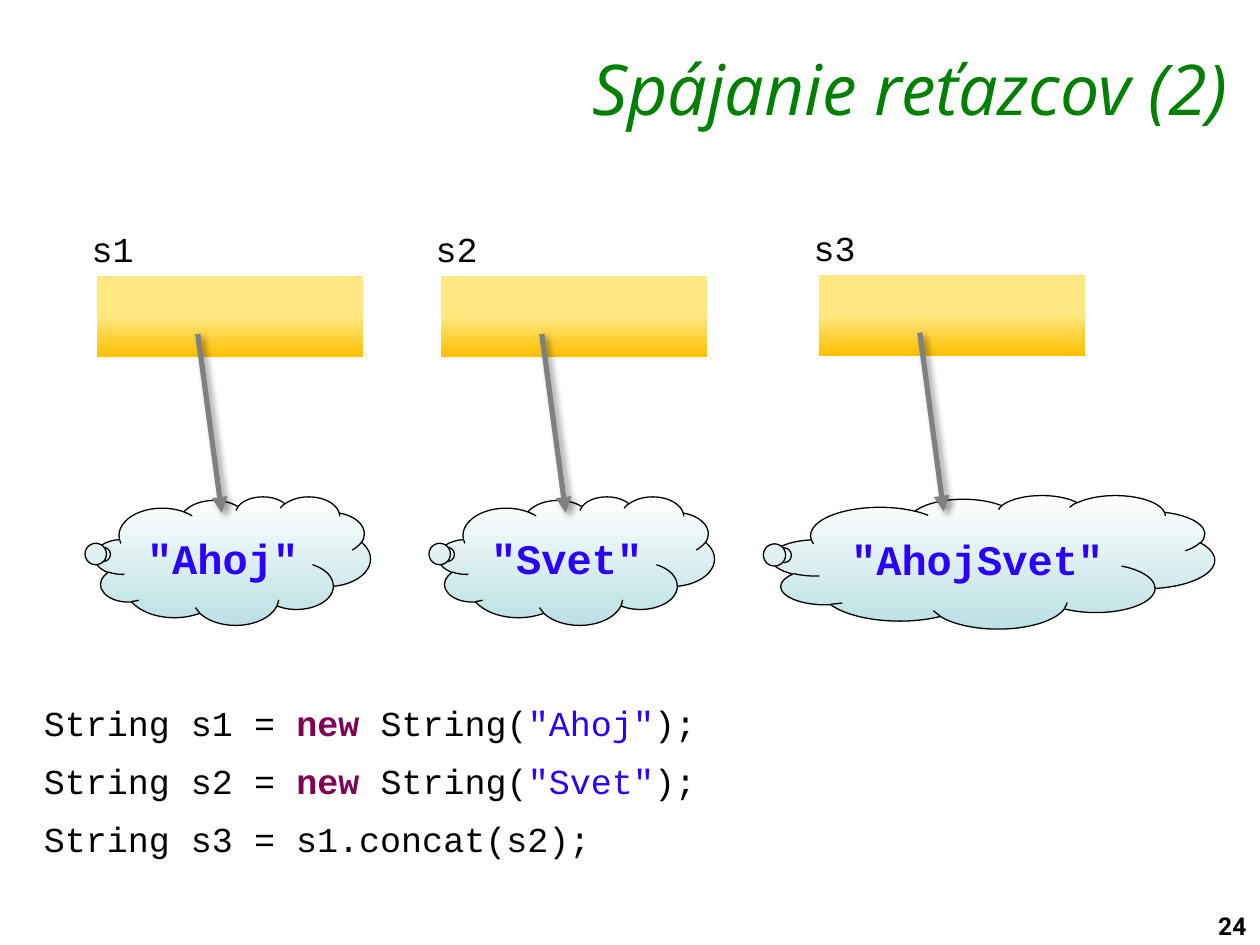
from lxml import etree
from pptx import Presentation
from pptx.dml.color import RGBColor
from pptx.enum.shapes import MSO_CONNECTOR, MSO_SHAPE
from pptx.enum.text import MSO_ANCHOR, MSO_AUTO_SIZE, PP_ALIGN
from pptx.oxml import parse_xml
from pptx.oxml.ns import nsdecls, qn
from pptx.util import Inches, Pt

COLORS = {
    "title": "008000", "text": "000000", "keyword": "7F0055", "string": "2A00FF",
    "arrow": "808080", "cloud_top": "FFFFFF", "cloud_bottom": "BBE0E3",
    "box_top": "FFE781", "box_bottom": "FFC000",
}
CODE_FONT = "Courier New"
TITLE = "Spájanie reťazcov (2)"
PAGE_NUMBER = "24"

# Variable name, value, left and top of its box, cloud (left, top, width, height)
VARIABLES = [
    ("s1", '"Ahoj"', 0.77, 2.19, (0.75, 3.94, 2.19, 1.02)),
    ("s2", '"Svet"', 3.5, 2.19, (3.48, 3.94, 2.19, 1.02)),
    ("s3", '"AhojSvet"', 6.5, 2.18, (6.12, 3.93, 3.52, 1.06)),
]

# Code lines as (text, colour name) pieces
CODE = [
    [("String s1 = ", "text"), ("new ", "keyword"), ("String(", "text"),
     ('"Ahoj"', "string"), (");", "text")],
    [("String s2 = ", "text"), ("new ", "keyword"), ("String(", "text"),
     ('"Svet"', "string"), (");", "text")],
    [("String s3 = s1.concat(s2);", "text")],
]


def color(name):
    return RGBColor.from_string(COLORS[name])


def format_font(font, name, size, color_name, bold=False, italic=False):
    font.name, font.size = name, Pt(size)
    font.bold, font.italic = bold, italic
    font.color.rgb = color(color_name)


def add_text_box(slide, left, top, width, height):
    box = slide.shapes.add_textbox(Inches(left), Inches(top), Inches(width), Inches(height))
    box.text_frame.word_wrap = True
    return box.text_frame


def add_label(slide, text, place, font_name, size, bold=False):
    frame = add_text_box(slide, *place)
    frame.text = text
    format_font(frame.paragraphs[0].runs[0].font, font_name, size, "text", bold)


def add_gradient_shape(slide, kind, place, stops):
    shape = slide.shapes.add_shape(kind, *[Inches(value) for value in place])
    shape.shadow.inherit = False
    shape.fill.gradient()
    shape.fill.gradient_angle = 270  # top to bottom
    for stop, (position, name) in zip(shape.fill.gradient_stops, stops):
        stop.position = position
        stop.color.rgb = color(name)
    return shape


def add_cloud(slide, text, place):
    cloud = add_gradient_shape(slide, MSO_SHAPE.CLOUD_CALLOUT, place,
                               [(0, "cloud_top"), (1, "cloud_bottom")])
    cloud.adjustments[0], cloud.adjustments[1] = -0.466, -0.049
    cloud.line.color.rgb = color("text")
    cloud.line.width = Pt(0.75)
    frame = cloud.text_frame
    frame.word_wrap = False
    frame.vertical_anchor = MSO_ANCHOR.MIDDLE
    frame.text = text
    paragraph = frame.paragraphs[0]
    paragraph.alignment = PP_ALIGN.CENTER
    format_font(paragraph.runs[0].font, CODE_FONT, 24, "string", bold=True)


def add_arrow(slide, left, top, right, bottom):
    arrow = slide.shapes.add_connector(
        MSO_CONNECTOR.STRAIGHT, Inches(left), Inches(top), Inches(right), Inches(bottom))
    arrow.line.color.rgb = color("arrow")
    arrow.line.width = Pt(3)
    etree.SubElement(arrow.line._get_or_add_ln(), qn("a:tailEnd"), type="triangle")
    arrow._element.spPr.append(parse_xml(
        f'<a:effectLst {nsdecls("a")}><a:outerShdw blurRad="{Pt(4)}" dist="{Pt(3)}" '
        f'dir="2700000" algn="tl" rotWithShape="0"><a:srgbClr val="{COLORS["text"]}">'
        '<a:alpha val="40000"/></a:srgbClr></a:outerShdw></a:effectLst>'))


def add_variable(slide, name, value, left, top, cloud_place):
    add_cloud(slide, value, cloud_place)
    add_label(slide, name, (left - 0.14, top - 0.43, 2.7, 0.43), CODE_FONT, 20)
    box = add_gradient_shape(slide, MSO_SHAPE.RECTANGLE, (left, top, 2.11, 0.64),
                             [(0.5, "box_top"), (1, "box_bottom")])
    box.line.fill.background()
    add_arrow(slide, left + 0.8, top + 0.46, left + 0.99, top + 1.88)


def add_code(slide):
    frame = add_text_box(slide, 0.25, 5.46, 6.06, 1.36)
    frame.margin_top = Inches(0.11)
    for index, pieces in enumerate(CODE):
        paragraph = frame.add_paragraph() if index else frame.paragraphs[0]
        paragraph.space_before = Pt(4.5 if index else 0)
        paragraph.space_after = Pt(4.5)
        for text, color_name in pieces:
            run = paragraph.add_run()
            run.text = text
            format_font(run.font, CODE_FONT, 20, color_name, bold=color_name == "keyword")


def add_title(slide):
    title = slide.shapes.title
    title.left, title.top = Inches(2.29), Inches(0.31)
    title.width, title.height = Inches(7.55), Inches(0.58)
    frame = title.text_frame
    frame.text = TITLE
    frame.word_wrap = True
    frame.auto_size = MSO_AUTO_SIZE.NONE
    frame.vertical_anchor = MSO_ANCHOR.TOP
    paragraph = frame.paragraphs[0]
    paragraph.alignment = PP_ALIGN.RIGHT
    format_font(paragraph.runs[0].font, "Open Sans", 40, "title", italic=True)


def main():
    presentation = Presentation()
    presentation.slide_width, presentation.slide_height = Inches(10), Inches(7.5)
    slide = presentation.slides.add_slide(presentation.slide_layouts[5])

    add_title(slide)
    add_label(slide, PAGE_NUMBER, (9.57, 7.18, 0.51, 0.33), "Roboto", 14, bold=True)
    add_code(slide)
    for variable in VARIABLES:
        add_variable(slide, *variable)

    presentation.save("out.pptx")


if __name__ == "__main__":
    main()
